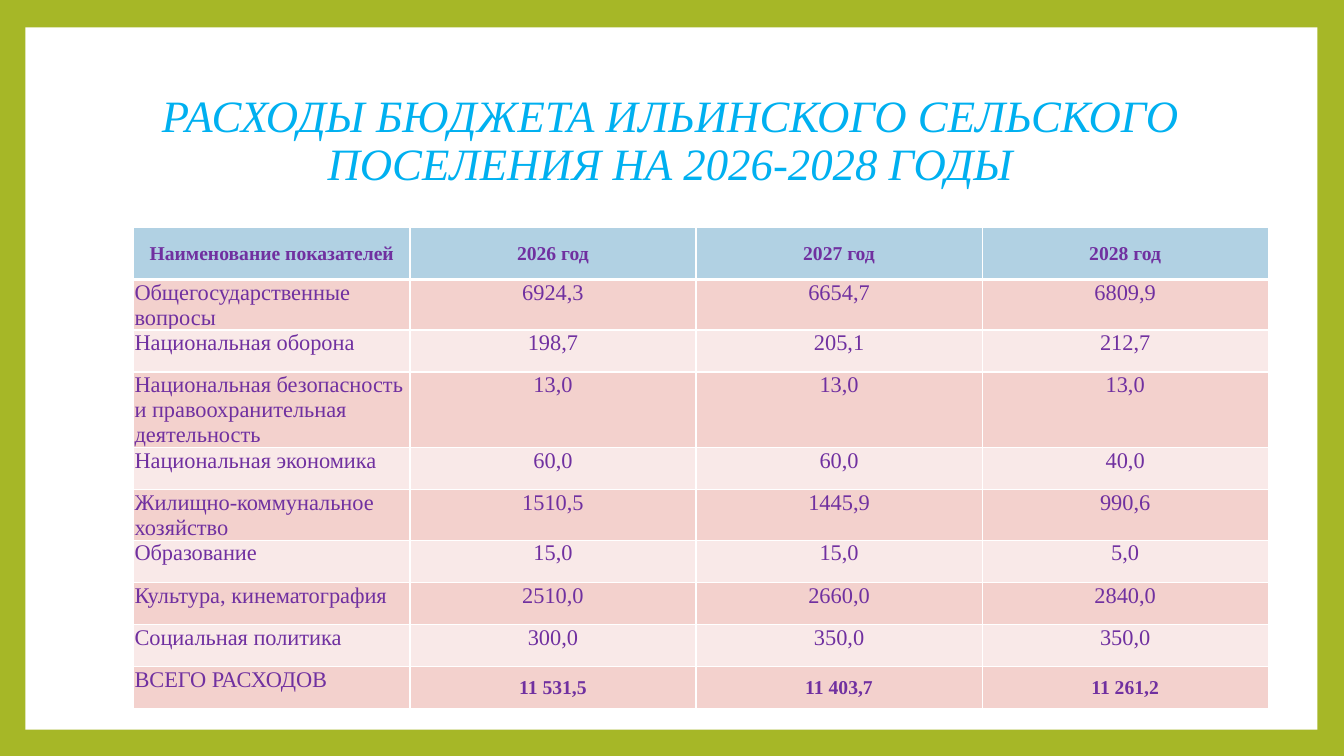
import pptx
import pptx.util
import pptx.dml.color
import pptx.enum.shapes
import pptx.enum.text
import pptx.oxml
import pptx.oxml.ns
from dataclasses import dataclass

Cm = pptx.util.Cm
Pt = pptx.util.Pt
ALIGN = pptx.enum.text.PP_ALIGN
ANCHOR = pptx.enum.text.MSO_ANCHOR


@dataclass(frozen=True)
class Theme:
    font: str = "Times New Roman"
    frame: str = "A6B727"
    panel: str = "FFFFFF"
    title: str = "00B0F0"
    table_text: str = "7030A0"
    header_fill: str = "B1D1E3"
    bands: tuple = ("F3D1CD", "F9E9E8")
    border: str = "FFFFFF"
    title_size: int = 32
    body_size: int = 16
    strong_size: int = 14
    thin_line: int = 1
    thick_line: int = 3


THEME = Theme()

TITLE = "РАСХОДЫ БЮДЖЕТА ИЛЬИНСКОГО СЕЛЬСКОГО ПОСЕЛЕНИЯ НА 2026-2028 ГОДЫ"
EXPENSES = [
    ("Наименование показателей", "2026 год", "2027 год", "2028 год"),
    ("Общегосударственные вопросы", "6924,3", "6654,7", "6809,9"),
    ("Национальная оборона", "198,7", "205,1", "212,7"),
    ("Национальная безопасность и правоохранительная деятельность",
     "13,0", "13,0", "13,0"),
    ("Национальная экономика", "60,0", "60,0", "40,0"),
    ("Жилищно-коммунальное хозяйство", "1510,5", "1445,9", "990,6"),
    ("Образование", "15,0", "15,0", "5,0"),
    ("Культура, кинематография", "2510,0", "2660,0", "2840,0"),
    ("Социальная политика", "300,0", "350,0", "350,0"),
    ("ВСЕГО РАСХОДОВ", "11 531,5", "11 403,7", "11 261,2"),
]
HEADER_ROW, SECURITY_ROW, TOTAL_ROW = 0, 3, len(EXPENSES) - 1
ROW_HEIGHT = 1.06
SPECIAL_HEIGHTS = {HEADER_ROW: 1.32, SECURITY_ROW: 1.57}
COLUMN_WIDTHS = (6.96, 7.21, 7.21, 7.21)


def rgb(value):
    return pptx.dml.color.RGBColor.from_string(value)


def set_fill(fill, color):
    fill.solid()
    fill.fore_color.rgb = rgb(color)


def add_run(paragraph, text, size, color, bold=False, italic=False):
    run = paragraph.add_run()
    run.text = text
    run.font.name = THEME.font
    run.font.size = Pt(size)
    run.font.bold = bold
    run.font.italic = italic
    run.font.color.rgb = rgb(color)


def set_borders(cell, widths):
    """Draw the left, right, top and bottom lines, widths in points."""
    properties = cell._tc.get_or_add_tcPr()
    for index, (side, width) in enumerate(zip("LRTB", widths)):
        line = pptx.oxml.parse_xml(
            f'<a:ln{side} {pptx.oxml.ns.nsdecls("a")} w="{Pt(width)}">'
            f'<a:solidFill><a:srgbClr val="{THEME.border}"/></a:solidFill>'
            f'</a:ln{side}>')
        properties.insert(index, line)


def add_panel(slide):
    panel = slide.shapes.add_shape(
        pptx.enum.shapes.MSO_SHAPE.RECTANGLE,
        Cm(0.64), Cm(0.69), Cm(32.56), Cm(17.7))
    panel.shadow.inherit = False
    set_fill(panel.fill, THEME.panel)
    panel.line.fill.background()
    # Keep the panel behind the title
    slide.shapes.title.element.addprevious(panel.element)


def fill_title(slide):
    title = slide.shapes.title
    title.left, title.top = Cm(3.18), Cm(1.7)
    title.width, title.height = Cm(27.43), Cm(3.76)
    frame = title.text_frame
    frame.word_wrap = True
    frame.auto_size = pptx.enum.text.MSO_AUTO_SIZE.NONE
    frame.vertical_anchor = ANCHOR.MIDDLE
    paragraph = frame.paragraphs[0]
    paragraph.alignment = ALIGN.CENTER
    paragraph.line_spacing = 0.9
    add_run(paragraph, TITLE, THEME.title_size, THEME.title, italic=True)


def format_cell(cell, text, row, column):
    is_header = row == HEADER_ROW
    is_strong = is_header or (row == TOTAL_ROW and column > 0)
    cell.margin_left = cell.margin_right = cell.margin_top = Cm(0.02)
    cell.margin_bottom = 0
    cell.vertical_anchor = ANCHOR.MIDDLE if is_strong else ANCHOR.TOP
    set_fill(cell.fill,
             THEME.header_fill if is_header else THEME.bands[(row - 1) % 2])
    thin, thick = THEME.thin_line, THEME.thick_line
    set_borders(cell, (thin, thin,
                       thick if row == HEADER_ROW + 1 else thin,
                       thick if is_header else thin))
    paragraph = cell.text_frame.paragraphs[0]
    paragraph.alignment = ALIGN.CENTER if is_header or column else ALIGN.LEFT
    add_run(paragraph, text,
            THEME.strong_size if is_strong else THEME.body_size,
            THEME.table_text, bold=is_strong)


def add_expense_table(slide):
    heights = [SPECIAL_HEIGHTS.get(row, ROW_HEIGHT)
               for row in range(len(EXPENSES))]
    table = slide.shapes.add_table(
        len(EXPENSES), len(COLUMN_WIDTHS), Cm(3.37), Cm(5.72),
        Cm(sum(COLUMN_WIDTHS)), Cm(sum(heights))).table
    for column, width in zip(table.columns, COLUMN_WIDTHS):
        column.width = Cm(width)
    for row, (height, texts) in enumerate(zip(heights, EXPENSES)):
        table.rows[row].height = Cm(height)
        for column, text in enumerate(texts):
            format_cell(table.cell(row, column), text, row, column)


def main():
    presentation = pptx.Presentation()
    presentation.slide_width = Cm(33.87)
    presentation.slide_height = Cm(19.05)
    # Title Only layout
    slide = presentation.slides.add_slide(presentation.slide_layouts[5])
    set_fill(slide.background.fill, THEME.frame)
    add_panel(slide)
    fill_title(slide)
    add_expense_table(slide)
    presentation.save("out.pptx")


if __name__ == "__main__":
    main()
